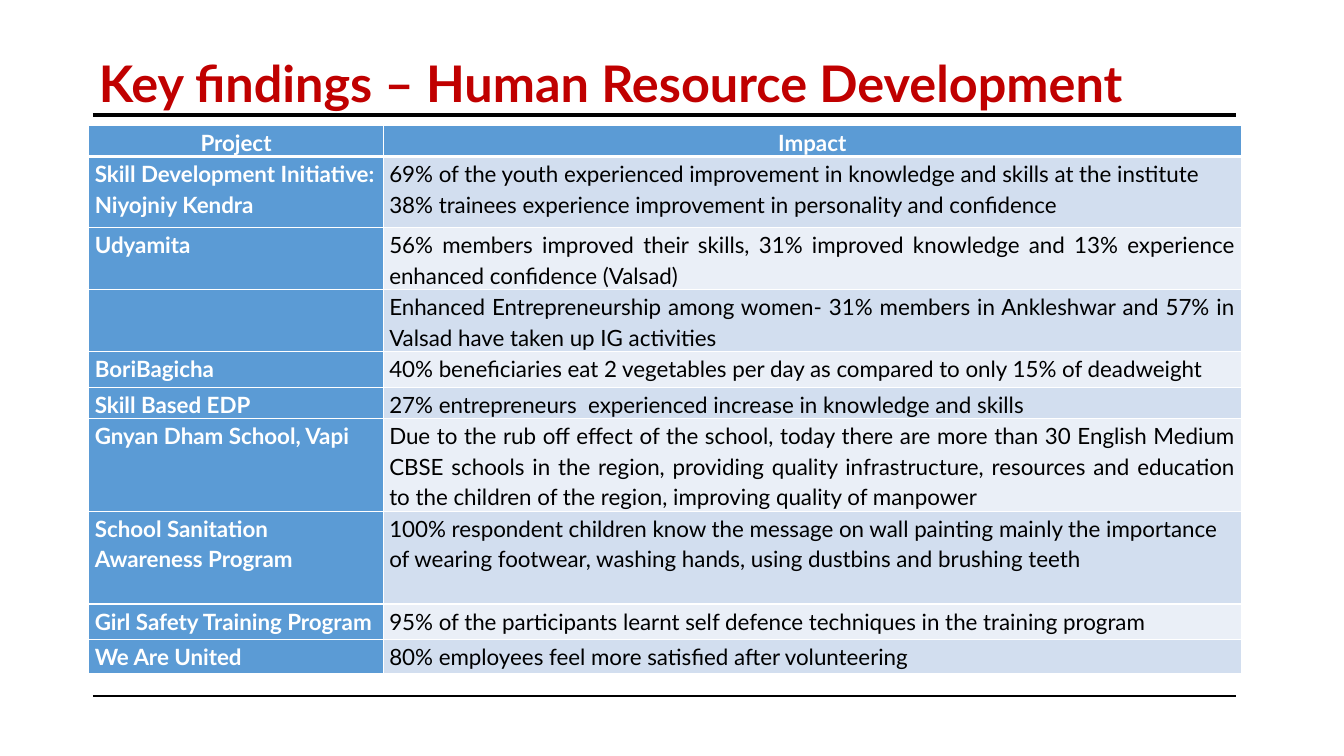
from lxml.etree import SubElement
from pptx import Presentation
from pptx.dml.color import RGBColor
from pptx.enum.shapes import MSO_CONNECTOR
from pptx.enum.text import MSO_AUTO_SIZE, PP_ALIGN as Align
from pptx.oxml import parse_xml
from pptx.oxml.ns import nsdecls, qn
from pptx.util import Cm, Pt

TITLE = "Key findings – Human Resource Development"
HEADER = ("Project", "Impact")
FINDINGS = [
    ("Skill Development Initiative: Niyojniy Kendra", 1.8, Align.JUSTIFY,
     ["69% of the youth experienced improvement in knowledge and skills at the institute",
      "38% trainees experience improvement in personality and confidence"]),
    ("Udyamita", 1.56, Align.JUSTIFY,
     ["56% members improved their skills, 31% improved knowledge and 13% experience "
      "enhanced confidence (Valsad)"]),
    ("", 1.56, Align.JUSTIFY,
     ["Enhanced Entrepreneurship among women- 31% members in Ankleshwar and 57% in "
      "Valsad have taken up IG activities"]),
    ("BoriBagicha", 0.9, Align.JUSTIFY,
     ["40% beneficiaries eat 2 vegetables per day as compared to only 15% of deadweight"]),
    ("Skill Based EDP", 0.78, Align.LEFT,
     ["27% entrepreneurs  experienced increase in knowledge and skills"]),
    ("Gnyan Dham School, Vapi", 2.34, Align.JUSTIFY,
     ["Due to the rub off effect of the school, today there are more than 30 English Medium "
      "CBSE schools in the region, providing quality infrastructure, resources and education "
      "to the children of the region, improving quality of manpower"]),
    ("School Sanitation Awareness Program", 2.34, Align.LEFT,
     ["100% respondent children know the message on wall painting mainly the importance "
      "of wearing footwear, washing hands, using dustbins and brushing teeth"]),
    ("Girl Safety Training Program", 0.9, Align.LEFT,
     ["95% of the participants learnt self defence techniques in the training program"]),
    ("We Are United", 0.86, Align.LEFT,
     ["80% employees feel more satisfied after volunteering"]),
]
COLORS = {"title": "C00000", "rule": "000000", "head": "5B9BD5", "odd": "D2DEEF",
          "even": "EAEFF7", "text": "000000", "white": "FFFFFF"}
FONT = "Lato"
RULES = [(2.9, 3), (17.53, 1.5)]
COLUMNS = (7.42, 21.62)
HEADER_HEIGHT = 0.78


def color(name):
    return RGBColor.from_string(COLORS[name])


def write(frame, lines, size, ink, bold, align=Align.LEFT):
    frame.word_wrap = True
    for index, line in enumerate(lines):
        para = frame.add_paragraph() if index else frame.paragraphs[0]
        para.text = line
        para.alignment = align
        para.line_spacing = 1.15
        para.font.name = FONT
        para.font.size = Pt(size)
        para.font.bold = bold
        para.font.color.rgb = color(ink)


def add_rule(page, top, weight):
    rule = page.shapes.add_connector(MSO_CONNECTOR.STRAIGHT, Cm(2.34), Cm(top), Cm(31.14), Cm(top))
    rule.line.color.rgb = color("rule")
    rule.line.width = Pt(weight)
    SubElement(rule._element.spPr, qn("a:effectLst"))


def fill_cell(cell, lines, fill, ink, bold, align, top_weight, bottom_weight):
    cell.margin_left = cell.margin_right = Cm(0.15)
    cell.margin_top = cell.margin_bottom = 0
    write(cell.text_frame, lines, 16, ink, bold, align)
    cell.fill.solid()
    cell.fill.fore_color.rgb = color(fill)
    properties = cell._tc.get_or_add_tcPr()
    weights = {"lnL": 1, "lnR": 1, "lnT": top_weight, "lnB": bottom_weight}
    for index, (side, weight) in enumerate(weights.items()):
        properties.insert(index, parse_xml(
            f'<a:{side} {nsdecls("a")} w="{Pt(weight)}"><a:solidFill>'
            f'<a:srgbClr val="{COLORS["white"]}"/></a:solidFill></a:{side}>'))


def add_findings(page):
    heights = [HEADER_HEIGHT] + [height for _, height, _, _ in FINDINGS]
    table = page.shapes.add_table(len(heights), len(COLUMNS), Cm(2.24), Cm(3.16),
                                  Cm(sum(COLUMNS)), Cm(sum(heights))).table
    for column, width in zip(table.columns, COLUMNS):
        column.width = Cm(width)
    for row, height in zip(table.rows, heights):
        row.height = Cm(height)
    for index, label in enumerate(HEADER):
        fill_cell(table.cell(0, index), [label], "head", "white", True, Align.CENTER, 1, 3)
    for index, (project, _, align, impacts) in enumerate(FINDINGS, 1):
        top_weight = 3 if index == 1 else 1
        band = "odd" if index % 2 else "even"
        fill_cell(table.cell(index, 0), [project], "head", "white", True, Align.LEFT, top_weight, 1)
        fill_cell(table.cell(index, 1), impacts, band, "text", False, align, top_weight, 1)


def main():
    deck = Presentation()
    deck.slide_width, deck.slide_height = Cm(33.87), Cm(19.05)
    page = deck.slides.add_slide(deck.slide_layouts[6])
    for top, weight in RULES:
        add_rule(page, top, weight)
    box = page.shapes.add_textbox(Cm(2.24), Cm(0.97), Cm(28.7), Cm(1.88))
    write(box.text_frame, [TITLE], 36, "title", True)
    box.text_frame.paragraphs[0].space_after = Pt(10)
    box.text_frame.auto_size = MSO_AUTO_SIZE.SHAPE_TO_FIT_TEXT
    add_findings(page)
    deck.save("out.pptx")


if __name__ == "__main__":
    main()
